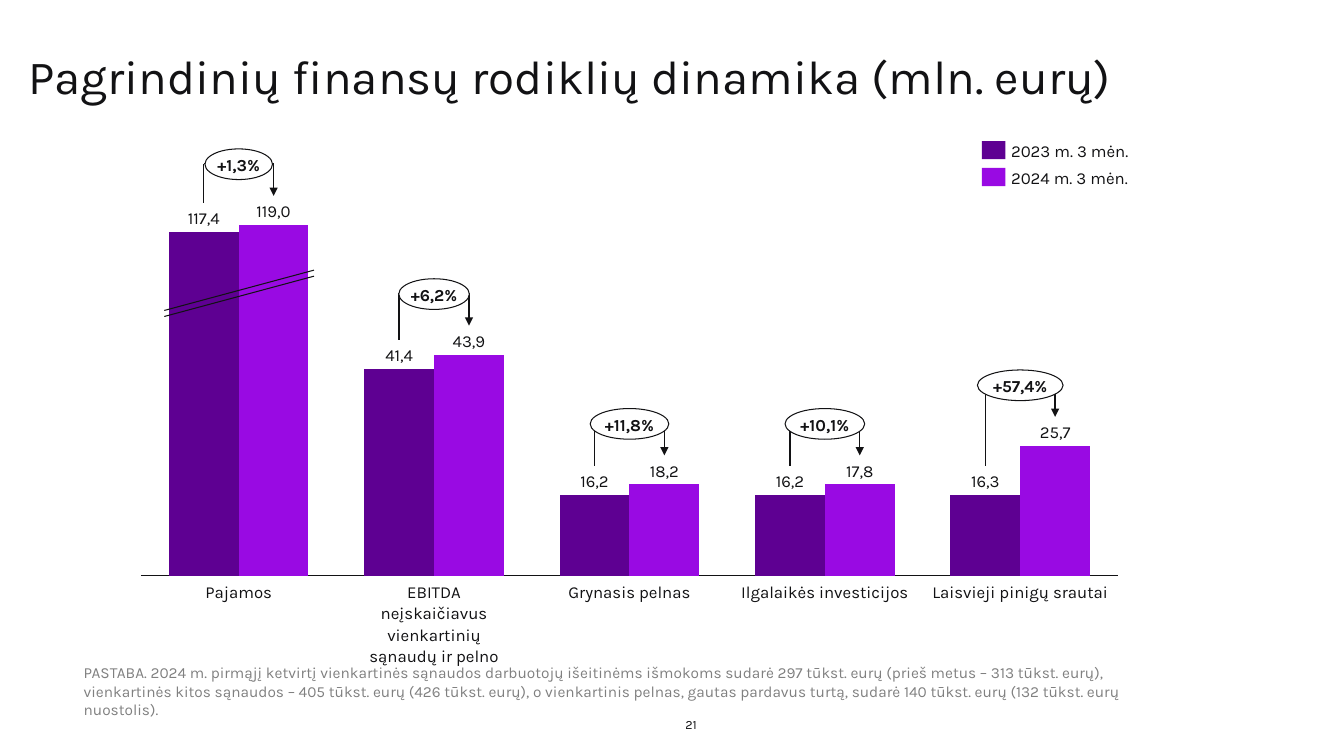
from collections import namedtuple

from lxml.etree import SubElement
from pptx import Presentation
from pptx.chart.data import CategoryChartData
from pptx.dml.color import RGBColor
from pptx.enum.chart import XL_CHART_TYPE, XL_TICK_LABEL_POSITION, XL_TICK_MARK
from pptx.enum.shapes import MSO_CONNECTOR, MSO_SHAPE
from pptx.enum.text import MSO_ANCHOR, MSO_AUTO_SIZE, PP_ALIGN
from pptx.oxml import parse_xml
from pptx.oxml.ns import nsdecls, qn
from pptx.util import Inches, Pt

INK = RGBColor(0x12, 0x12, 0x14)
GREY = RGBColor(0x80, 0x80, 0x80)
WHITE = RGBColor(0xFF, 0xFF, 0xFF)
DARK_PURPLE = RGBColor(0x5E, 0x00, 0x92)
BRIGHT_PURPLE = RGBColor(0x99, 0x0A, 0xE3)

# The grid has 160 columns and 90 rows
COLUMNS, ROWS = 160, 90
WIDTH, HEIGHT = Inches(13.33), Inches(7.5)

# Chart frame and plot area in grid units
CHART = (15.72, 25.68, 118.44, 43.92)
PLOT_SHARES = {"x": 0.009, "y": 0.025, "w": 0.982, "h": 0.951}
PLOT_LEFT = CHART[0] + PLOT_SHARES["x"] * CHART[2]
PLOT_TOP = CHART[1] + PLOT_SHARES["y"] * CHART[3]
PLOT_WIDTH = PLOT_SHARES["w"] * CHART[2]
PLOT_HEIGHT = PLOT_SHARES["h"] * CHART[3]
GAP = 80
TEXT_ROW = 2.52

Metric = namedtuple("Metric", "name heights labels growth badge_width wraps")
METRICS = [
    Metric("Pajamos", (98, 100), ("117,4", "119,0"), "+1,3%", 8.04, False),
    Metric("EBITDA neįskaičiavus vienkartinių sąnaudų ir pelno", (59, 63),
           ("41,4", "43,9"), "+6,2%", 8.4, True),
    Metric("Grynasis pelnas", (23, 26), ("16,2", "18,2"), "+11,8%", 9.36, False),
    Metric("Ilgalaikės investicijos", (23, 26), ("16,2", "17,8"), "+10,1%", 9.48, False),
    Metric("Laisvieji pinigų srautai", (23, 37), ("16,3", "25,7"), "+57,4%", 10.2, False),
]
PERIODS = [("2023 m. 3 mėn.", DARK_PURPLE), ("2024 m. 3 mėn.", BRIGHT_PURPLE)]
NOTE = ("PASTABA. 2024 m. pirmąjį ketvirtį vienkartinės sąnaudos darbuotojų išeitinėms "
        "išmokoms sudarė 297 tūkst. eurų (prieš metus – 313 tūkst. eurų), vienkartinės "
        "kitos sąnaudos – 405 tūkst. eurų (426 tūkst. eurų), o vienkartinis pelnas, gautas "
        "pardavus turtą, sudarė 140 tūkst. eurų (132 tūkst. eurų nuostolis).")


class SlideBuilder:
    font = "Karla"

    def __init__(self, slide):
        self.slide = slide

    def x(self, column):
        return round(WIDTH * column / COLUMNS)

    def y(self, row):
        return round(HEIGHT * row / ROWS)

    def box(self, left, top, width, height):
        return self.x(left), self.y(top), self.x(width), self.y(height)

    def fill_text(self, shape, text, size=12, color=INK, bold=False, align=PP_ALIGN.LEFT,
                  anchor=MSO_ANCHOR.TOP, wrap=True, spacing=None):
        frame = shape.text_frame
        frame.margin_left = frame.margin_right = frame.margin_top = frame.margin_bottom = 0
        frame.auto_size = MSO_AUTO_SIZE.NONE
        frame.word_wrap = wrap
        frame.vertical_anchor = anchor
        paragraph = frame.paragraphs[0]
        paragraph.alignment = align
        if spacing:
            paragraph.line_spacing = spacing
        run = paragraph.add_run()
        run.text = text
        run.font.name, run.font.size, run.font.bold = self.font, Pt(size), bold
        run.font.color.rgb = color

    def title(self, text, *place):
        title = self.slide.shapes.title
        title.left, title.top, title.width, title.height = self.box(*place)
        self.fill_text(title, text, size=34, spacing=0.86)

    def text(self, text, *place, **style):
        self.fill_text(self.slide.shapes.add_textbox(*self.box(*place)), text, **style)

    def label(self, text, *place, **style):
        self.text(text, *place, **{"wrap": False, "spacing": 1.06, **style})

    def shape(self, kind, fill, *place):
        shape = self.slide.shapes.add_shape(kind, *self.box(*place))
        shape.shadow.inherit = False
        shape.fill.solid()
        shape.fill.fore_color.rgb = fill
        shape.line.fill.background()
        return shape

    def badge(self, text, *place):
        badge = self.shape(MSO_SHAPE.OVAL, WHITE, *place)
        badge.line.color.rgb = INK
        badge.line.width = Pt(0.75)
        self.fill_text(badge, text, bold=True, align=PP_ALIGN.CENTER,
                       anchor=MSO_ANCHOR.MIDDLE, wrap=False, spacing=1.06)

    def line(self, start, end, width=1, arrow=False):
        line = self.slide.shapes.add_connector(
            MSO_CONNECTOR.STRAIGHT, self.x(start[0]), self.y(start[1]),
            self.x(end[0]), self.y(end[1]))
        line.line.color.rgb = INK
        line.line.width = Pt(width)
        properties = line.element.spPr
        if arrow:
            SubElement(properties.find(qn("a:ln")), qn("a:tailEnd"), type="triangle")
        SubElement(properties, qn("a:effectLst"))

    def column_chart(self, metrics, periods, *place):
        data = CategoryChartData()
        data.categories = [metric.name for metric in metrics]
        for index, (period, _) in enumerate(periods):
            data.add_series(period, [metric.heights[index] for metric in metrics])
        chart = self.slide.shapes.add_chart(
            XL_CHART_TYPE.COLUMN_CLUSTERED, *self.box(*place), data).chart
        chart.has_legend = chart.has_title = False
        chart.font.name, chart.font.size = self.font, Pt(10)
        chart.font.color.rgb = INK

        # Columns
        plot = chart.plots[0]
        plot.gap_width, plot.overlap, plot.vary_by_categories = GAP, 0, False
        for series, (_, color) in zip(plot.series, periods):
            series.format.fill.solid()
            series.format.fill.fore_color.rgb = color

        # Axes
        values, categories = chart.value_axis, chart.category_axis
        values.minimum_scale, values.maximum_scale = 0, 100
        values.has_major_gridlines = values.visible = False
        categories.tick_label_position = XL_TICK_LABEL_POSITION.NONE
        categories.major_tick_mark = XL_TICK_MARK.NONE
        categories.format.line.color.rgb = INK
        categories.format.line.width = Pt(0.75)

        # Fixed inner plot area
        area = chart.element.find(".//" + qn("c:plotArea"))
        for layout in area.findall(qn("c:layout")):
            area.remove(layout)
        modes = '<c:xMode val="edge"/><c:yMode val="edge"/>'
        shares = "".join(f'<c:{key} val="{share}"/>' for key, share in PLOT_SHARES.items())
        area.insert(0, parse_xml(
            f'<c:layout {nsdecls("c")}><c:manualLayout><c:layoutTarget val="inner"/>'
            f'{modes}{shares}</c:manualLayout></c:layout>'))

    def metric(self, metric, center):
        bar = PLOT_WIDTH / len(METRICS) / (2 + GAP / 100)
        bar_centers = center - bar / 2, center + bar / 2
        label_tops = [PLOT_TOP + PLOT_HEIGHT * (1 - height / 100) - 3
                      for height in metric.heights]

        # Growth bracket
        (left, right), bracket = bar_centers, label_tops[1] - 4.3
        self.line((left, label_tops[0] - 0.48), (left, bracket))
        self.line((left, bracket), (right, bracket))
        self.line((right, bracket), (right, bracket + 3.84), arrow=True)
        self.badge(metric.growth, center - metric.badge_width / 2, bracket - 1.75,
                   metric.badge_width, 3.65)

        # Values and name
        for text, bar_center, top in zip(metric.labels, bar_centers, label_tops):
            self.label(text, bar_center - 2.5, top, 5, TEXT_ROW,
                       align=PP_ALIGN.CENTER, anchor=MSO_ANCHOR.BOTTOM)
        self.label(metric.name, center - 9.54, 69.12, 19.08, 3 * TEXT_ROW,
                   align=PP_ALIGN.CENTER, wrap=metric.wraps)


def main():
    presentation = Presentation()
    presentation.slide_width, presentation.slide_height = WIDTH, HEIGHT
    builder = SlideBuilder(presentation.slides.add_slide(presentation.slide_layouts[5]))

    # Title, page number and note
    builder.title("Pagrindinių finansų rodiklių dinamika (mln. eurų)", 3.36, 6.6, 153.24, 12.12)
    builder.text("21", 81.6, 84.24, 9.72, 2.88, size=9, anchor=MSO_ANCHOR.BOTTOM)
    builder.text(NOTE, 9.96, 78.96, 129.36, 6.72, size=11, color=GREY)

    # Chart with the break across the first group
    builder.column_chart(METRICS, PERIODS, *CHART)
    for top in (32.16, 32.88):
        builder.line((19.56, top + 4.8), (37.38, top), width=0.75)
    pitch = PLOT_WIDTH / len(METRICS)
    for index, metric in enumerate(METRICS):
        builder.metric(metric, PLOT_LEFT + pitch * (index + 0.5))

    # Legend
    for index, (period, color) in enumerate(PERIODS):
        top = 16.6 + 3.2 * index
        builder.shape(MSO_SHAPE.RECTANGLE, color, 116.88, top + 0.2, 2.8, 2.16)
        builder.label(period, 120.36, top, 13.7, TEXT_ROW, anchor=MSO_ANCHOR.MIDDLE)

    presentation.save("out.pptx")


if __name__ == "__main__":
    main()
